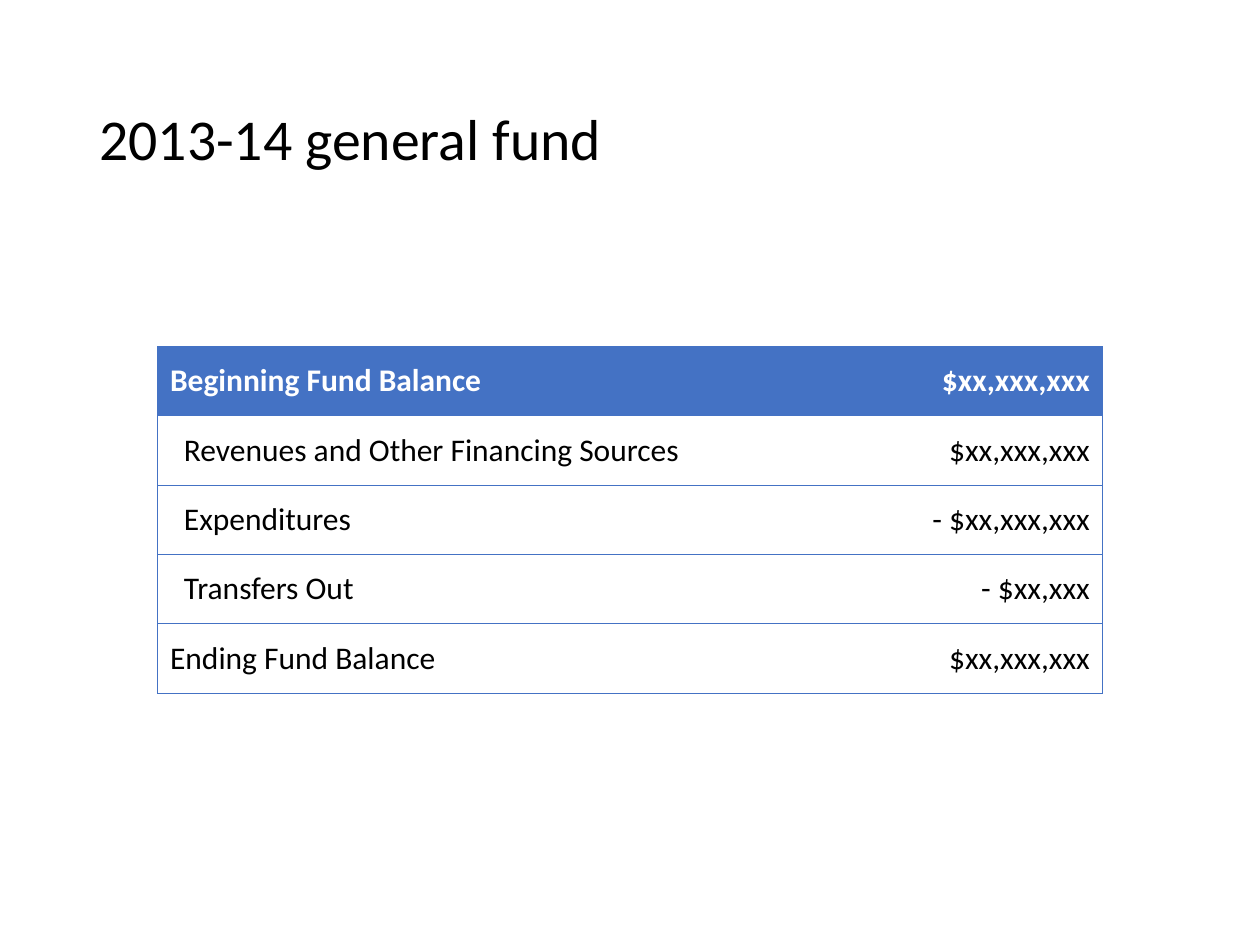
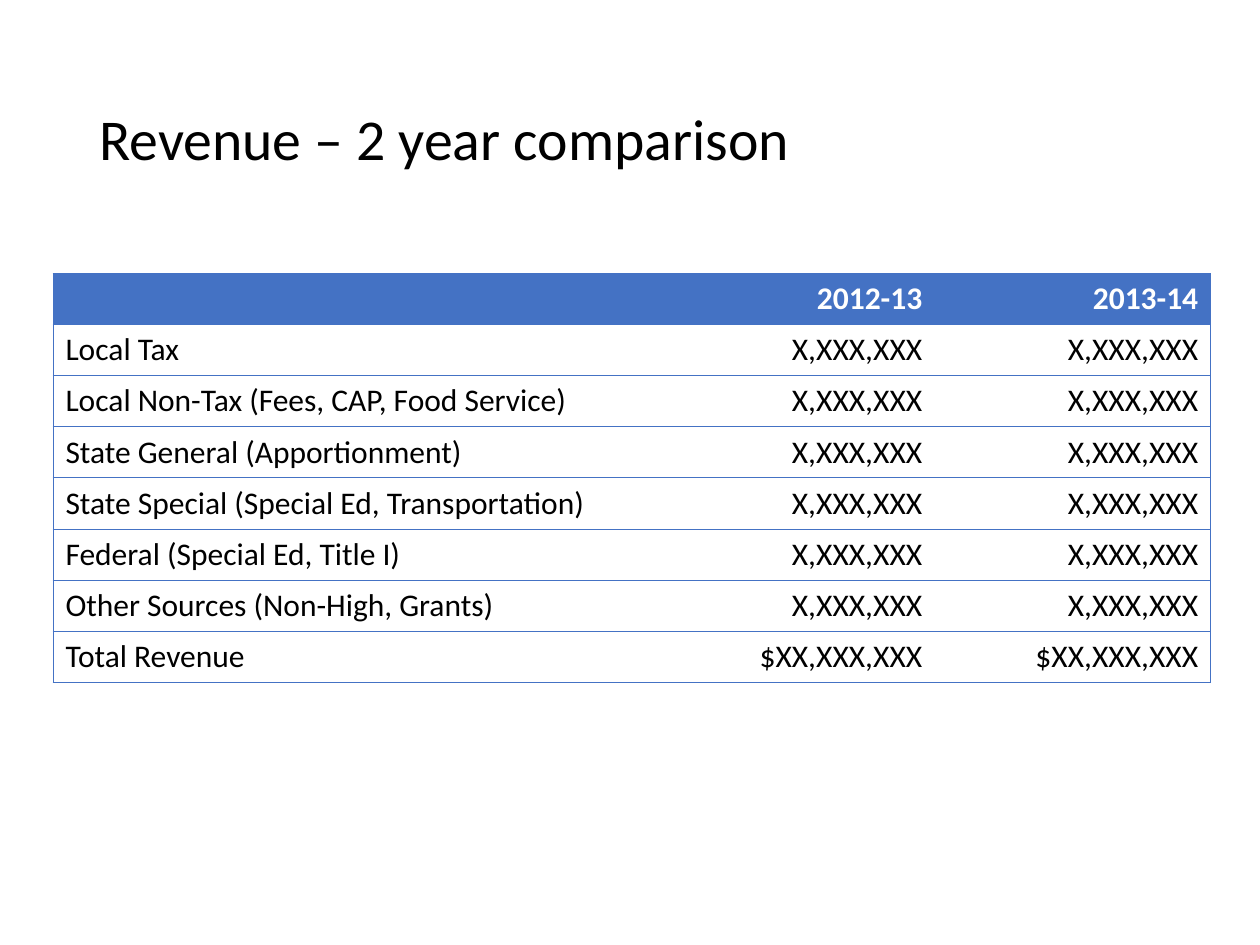
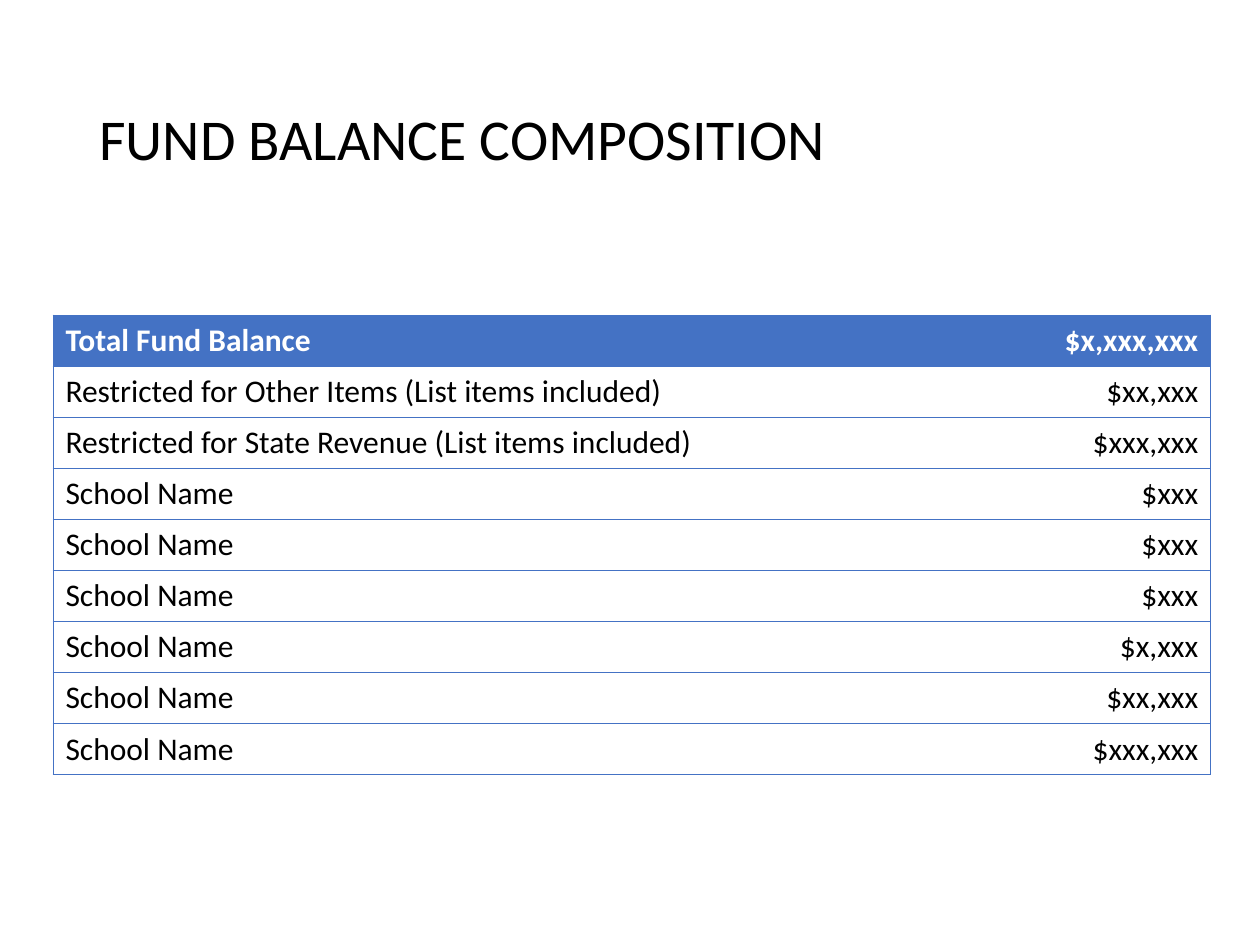
"""Build three school fund report slides, each with a title and a ruled table."""
from lxml.etree import SubElement
from pptx import Presentation
from pptx.dml.color import RGBColor
from pptx.enum.text import MSO_ANCHOR as Anchor, PP_ALIGN as Align
from pptx.oxml.ns import qn
from pptx.util import Inches, Pt

BLUE = RGBColor(0x44, 0x72, 0xC4)
WHITE = RGBColor(0xFF, 0xFF, 0xFF)
BLACK = RGBColor(0x00, 0x00, 0x00)
FONT = "Calibri"


def style_font(paragraph, size, color, bold=False):
    paragraph.font.name = FONT
    paragraph.font.size = Pt(size)
    paragraph.font.color.rgb = color
    paragraph.font.bold = bold


def rule_cell(cell, ruled_sides):
    properties = cell._tc.get_or_add_tcPr()
    for side in "LRTB":
        line = SubElement(properties, qn(f"a:ln{side}"), w=str(Pt(0.5)))
        if side in ruled_sides:
            fill = SubElement(line, qn("a:solidFill"))
            SubElement(fill, qn("a:srgbClr"), val=str(BLUE))
        else:
            SubElement(line, qn("a:noFill"))


MONEY = "X,XXX,XXX"
REPORTS = [
    {
        "title": "2013-14 general fund",
        "left": 1.25, "top": 2.75, "row_height": 0.55,
        "widths": [4.75, 2.75],
        "anchor": Anchor.MIDDLE,
        "indented_rows": [1, 2, 3],
        "rows": [
            ["Beginning Fund Balance", "$xx,xxx,xxx"],
            ["Revenues and Other Financing Sources", "$xx,xxx,xxx"],
            ["Expenditures", "- $xx,xxx,xxx"],
            ["Transfers Out", "- $xx,xxx"],
            ["Ending Fund Balance", "$xx,xxx,xxx"],
        ],
    },
    {
        "title": "Revenue – 2 year comparison",
        "left": 0.42, "top": 2.17, "row_height": 3.65 / 9,
        "widths": [4.75, 2.25, 2.19],
        "anchor": Anchor.TOP,
        "indented_rows": [],
        "rows": [
            ["", "2012-13", "2013-14"],
            ["Local Tax", MONEY, MONEY],
            ["Local Non-Tax (Fees, CAP, Food Service)", MONEY, MONEY],
            ["State General (Apportionment)", MONEY, MONEY],
            ["State Special (Special Ed, Transportation)", MONEY, MONEY],
            ["Federal (Special Ed, Title I)", MONEY, MONEY],
            ["Other Sources (Non-High, Grants)", MONEY, MONEY],
            ["Total Revenue", "$XX,XXX,XXX", "$XX,XXX,XXX"],
        ],
    },
    {
        "title": "FUND BALANCE COMPOSITION",
        "left": 0.42, "top": 2.5, "row_height": 3.65 / 9,
        "widths": [7.5, 1.69],
        "anchor": Anchor.TOP,
        "indented_rows": [],
        "rows": [
            ["Total Fund Balance", "$x,xxx,xxx"],
            ["Restricted for Other Items (List items included)", "$xx,xxx"],
            ["Restricted for State Revenue (List items included)", "$xxx,xxx"],
            *[["School Name", amount] for amount in
              ["$xxx", "$xxx", "$xxx", "$x,xxx", "$xx,xxx", "$xxx,xxx"]],
        ],
    },
]

deck = Presentation()
deck.slide_width = Inches(10)
deck.slide_height = Inches(7.5)

for report in REPORTS:
    slide = deck.slides.add_slide(deck.slide_layouts[6])

    heading = slide.shapes.add_textbox(
        Inches(0.69), Inches(0.4), Inches(8.62), Inches(1.45)).text_frame
    heading.word_wrap = True
    heading.vertical_anchor = Anchor.MIDDLE
    title = heading.paragraphs[0]
    title.text = report["title"]
    title.line_spacing = 0.9
    style_font(title, 33, BLACK)

    rows, widths = report["rows"], report["widths"]
    funds = slide.shapes.add_table(
        len(rows), len(widths), Inches(report["left"]), Inches(report["top"]),
        Inches(sum(widths)), Inches(report["row_height"] * len(rows))).table
    funds.horz_banding = False
    for column, width in zip(funds.columns, widths):
        column.width = Inches(width)

    for row_index, row in enumerate(rows):
        is_header = row_index == 0
        for column_index, entry in enumerate(row):
            is_label = column_index == 0
            cell = funds.cell(row_index, column_index)
            cell.vertical_anchor = report["anchor"]
            if is_label and row_index in report["indented_rows"]:
                cell.margin_left = Inches(0.21)
            sides = "TB" + "L" * is_label + "R" * (column_index == len(row) - 1)
            rule_cell(cell, sides)
            cell.fill.solid()
            cell.fill.fore_color.rgb = BLUE if is_header else WHITE
            paragraph = cell.text_frame.paragraphs[0]
            paragraph.text = entry
            paragraph.alignment = Align.LEFT if is_label else Align.RIGHT
            style_font(paragraph, 18, WHITE if is_header else BLACK, is_header)

deck.save("out.pptx")
